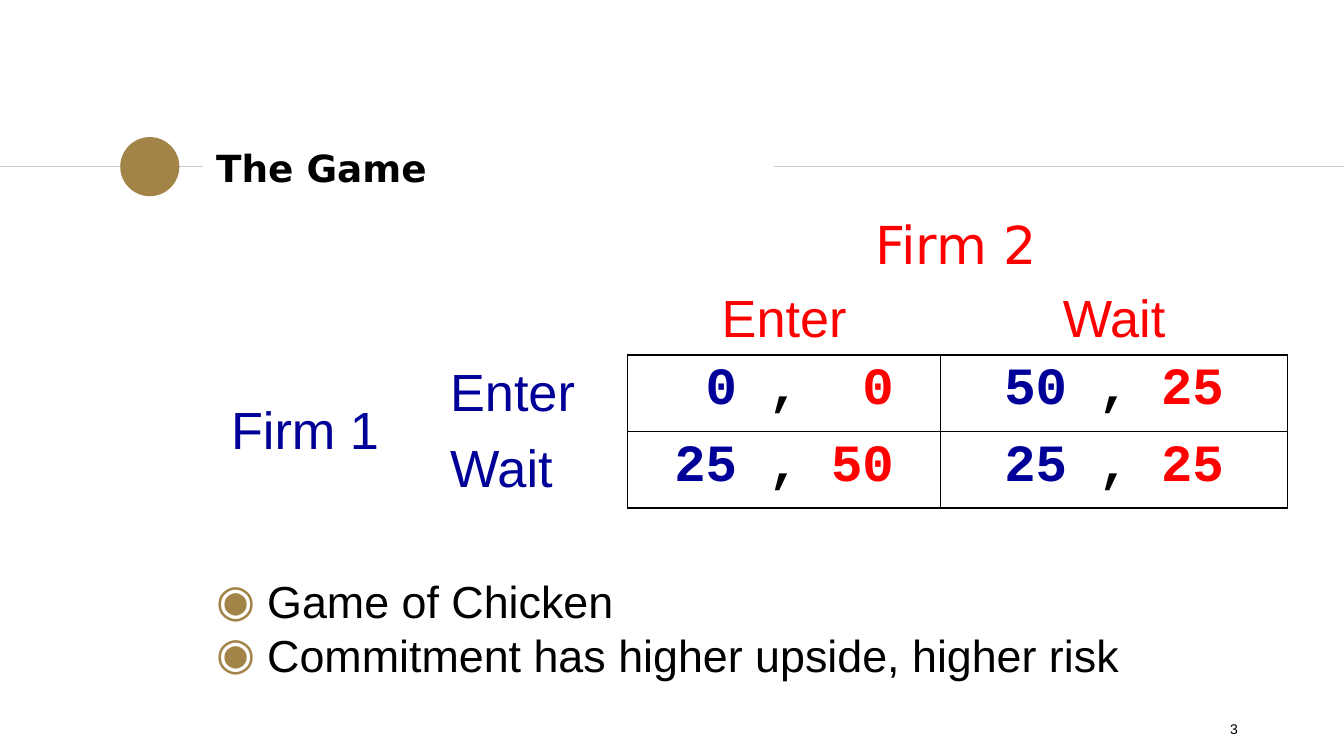
import pptx
import pptx.util
import pptx.dml.color
import pptx.enum.shapes
import pptx.enum.text
import pptx.oxml
import pptx.oxml.ns
from lxml import etree

RGB = pptx.dml.color.RGBColor
BLACK = RGB(0x00, 0x00, 0x00)
GOLD = RGB(0xA2, 0x84, 0x48)
GREY = RGB(0xCC, 0xCC, 0xCC)
RED = RGB(0xFF, 0x00, 0x00)
BLUE = RGB(0x00, 0x00, 0x99)

Pt = pptx.util.Pt
qn = pptx.oxml.ns.qn
ALIGN = pptx.enum.text.PP_ALIGN
ANCHOR = pptx.enum.text.MSO_ANCHOR
NS = 'xmlns:a="http://schemas.openxmlformats.org/drawingml/2006/main"'

deck = pptx.Presentation()
deck.slide_width = pptx.util.Inches(10)
deck.slide_height = deck.slide_width * 9 // 16
slide = deck.slides.add_slide(deck.slide_layouts[6])
shapes = slide.shapes

# Square grid: 100 columns across the slide
UNIT = deck.slide_width // 100


def grid(*cells):
    return [round(cell * UNIT) for cell in cells]


def write(frame, runs, align=ALIGN.LEFT, anchor=None, para=None):
    """Add runs of (text, font values) to a paragraph, the first by default."""
    if anchor is not None:
        frame.word_wrap = True
        frame.vertical_anchor = anchor
    para = para or frame.paragraphs[0]
    para.alignment = align
    for text, look in runs:
        run = para.add_run()
        run.text = text
        for key, value in look.items():
            if key == "color":
                run.font.color.rgb = value
            else:
                setattr(run.font, key, value)


# Header rule with its dot
RULE = 12.4
for left, right in ((0, 15.1), (57.6, 100)):
    line = shapes.add_connector(
        pptx.enum.shapes.MSO_CONNECTOR.STRAIGHT, *grid(left, RULE, right, RULE))
    line.line.color.rgb = GREY
    line.line.width = Pt(0.75)
    etree.SubElement(line._element.spPr, qn("a:effectLst"))

dot = shapes.add_shape(
    pptx.enum.shapes.MSO_SHAPE.OVAL, *grid(8.95, RULE - 2.2, 4.4, 4.4))
dot.shadow.inherit = False
dot.fill.solid()
dot.fill.fore_color.rgb = GOLD
dot.line.fill.background()

# Bulleted notes, resting on the bottom of the body
body = shapes.add_textbox(*grid(15.1, 17.7, 74.5, 34)).text_frame
body.margin_left, body.margin_top, body.margin_right, body.margin_bottom = grid(1, 1, 1, 1)
NOTE = {"name": "Arial", "size": Pt(24), "color": BLACK}
notes = ("Game of Chicken", "Commitment has higher upside, higher risk")
for row, note in enumerate(notes):
    para = body.add_paragraph() if row else body.paragraphs[0]
    write(body, [(note, NOTE)], anchor=ANCHOR.BOTTOM, para=para)
    props = para._p.get_or_add_pPr()
    indent = grid(3.8)[0]
    props.set("marL", str(indent))
    props.set("indent", str(-indent))
    tint = etree.SubElement(props, qn("a:buClr"))
    etree.SubElement(tint, qn("a:srgbClr")).set("val", str(GOLD))
    etree.SubElement(props, qn("a:buFont")).set("typeface", "Arial")
    etree.SubElement(props, qn("a:buChar")).set("char", "◉")

# Page number, title and column player
page = shapes.add_textbox(*grid(70.6, 52.1, 22.5, 3)).text_frame
page.margin_bottom = grid(0.25)[0]
write(page, [("3", {"name": "Arial", "size": Pt(7.5), "color": BLACK})],
      ALIGN.RIGHT, ANCHOR.BOTTOM)

title = shapes.add_textbox(*grid(15.1, 10.1, 42.4, 4.8)).text_frame
title.margin_left = grid(1)[0]
write(title, [("The Game", {"name": "DejaVu Sans", "size": Pt(20),
                            "bold": True, "color": BLACK})], anchor=ANCHOR.MIDDLE)

rival = shapes.add_textbox(*grid(57.5, 15.3, 27.3, 5.7)).text_frame
write(rival, [("Firm 2", {"name": "DejaVu Sans", "size": Pt(28), "color": RED})],
      ALIGN.CENTER, ANCHOR.TOP)

# Payoff table
LABEL = {"name": "Arial", "size": Pt(28), "bold": False}
PAY = {"name": "Courier New", "size": Pt(28), "bold": True}
MOVES = ("Enter", "Wait")
PAYOFFS = (((0, 0), (50, 25)), ((25, 50), (25, 25)))

holder = shapes.add_table(3, 4, *grid(10.8, 20.7, 85, 17.1))
table = holder.table
table.first_row = table.horz_banding = False
# The built-in style without fills or borders
table._tbl.tblPr.find(qn("a:tableStyleId")).text = "{2D5ABB26-0587-4C30-8999-92F81FD0307C}"
for col, width in zip(table.columns, grid(21.7, 14.2, 23.3, 25.8)):
    col.width = width
for row in table.rows:
    row.height = grid(5.7)[0]

table.cell(1, 0).merge(table.cell(2, 0))
entries = [(1, 0, [("Firm 1", {**LABEL, "color": BLUE})], ALIGN.LEFT, ANCHOR.MIDDLE)]
for i, move in enumerate(MOVES):
    entries += [
        (0, i + 2, [(move, {**LABEL, "color": RED})], ALIGN.CENTER, ANCHOR.BOTTOM),
        (i + 1, 1, [(move, {**LABEL, "color": BLUE})], ALIGN.LEFT, ANCHOR.MIDDLE)]
    for j, (ours, theirs) in enumerate(PAYOFFS[i]):
        runs = [(f"{ours:>2}", {**PAY, "color": BLUE}),
                (" , ", {**PAY, "color": BLACK}),
                (f"{theirs:>2}", {**PAY, "color": RED})]
        entries.append((i + 1, j + 2, runs, ALIGN.CENTER, ANCHOR.TOP))

for row, col, runs, align, anchor in entries:
    cell = table.cell(row, col)
    write(cell.text_frame, runs, align)
    cell.vertical_anchor = anchor
    if row and col > 1:
        for side in "LRTB":
            cell._tc.get_or_add_tcPr().append(pptx.oxml.parse_xml(
                f'<a:ln{side} {NS} w="{Pt(1)}"><a:solidFill>'
                f'<a:srgbClr val="{BLACK}"/></a:solidFill></a:ln{side}>'))
table.cell(1, 0).margin_left = grid(6.4)[0]

for cell in table.iter_cells():
    cell.fill.background()

deck.save("out.pptx")
